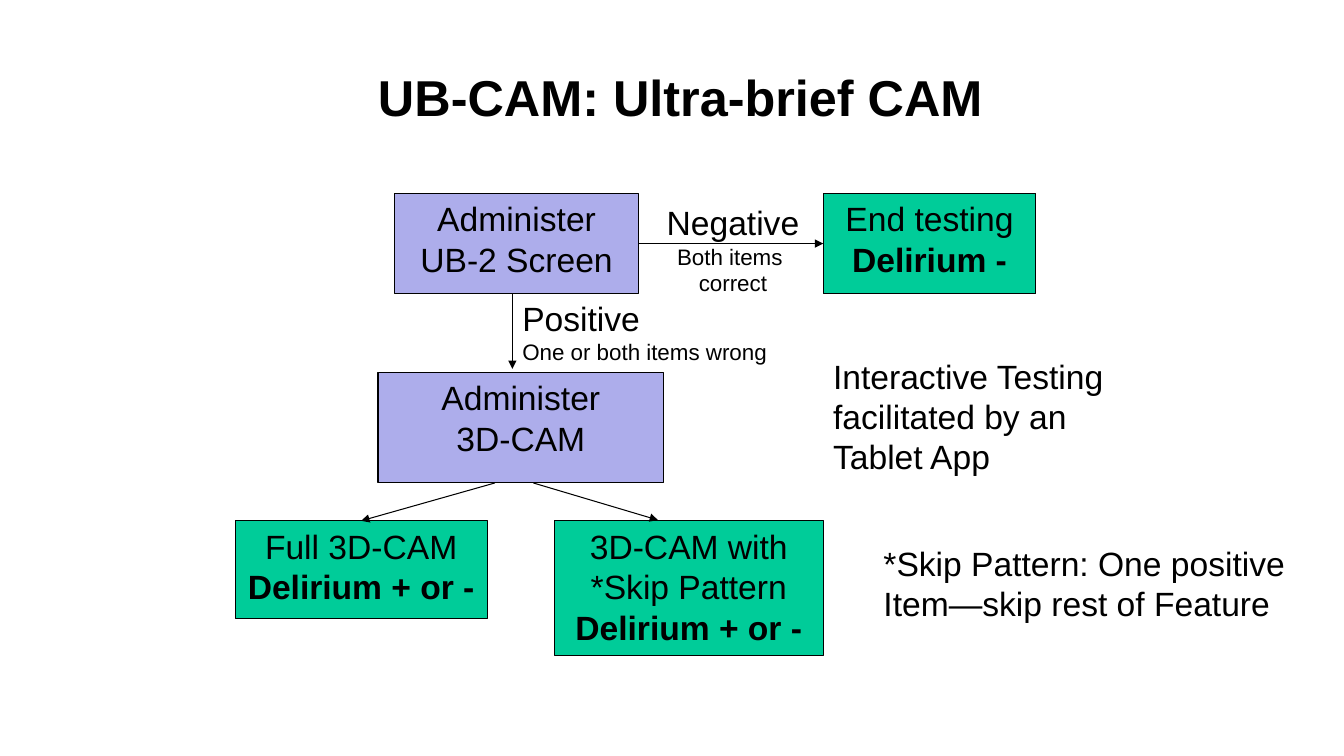
from dataclasses import dataclass

from lxml.etree import SubElement
from pptx import Presentation
from pptx.dml.color import RGBColor
from pptx.enum.shapes import MSO_CONNECTOR, MSO_SHAPE
from pptx.enum.text import MSO_ANCHOR, PP_ALIGN
from pptx.oxml.ns import qn
from pptx.util import Pt


@dataclass(frozen=True)
class Theme:
    """Colours, font and sizes of the flowchart."""
    font: str = "Arial"
    ink: RGBColor = RGBColor(0x00, 0x00, 0x00)
    step: RGBColor = RGBColor(0xAD, 0xAD, 0xEB)
    outcome: RGBColor = RGBColor(0x00, 0xCC, 0x99)
    title_size: int = 36
    body_size: int = 24
    note_size: int = 16
    line_width: float = 0.75


class FlowchartSlide:
    """Draws flowchart elements on one slide in one theme."""

    def __init__(self, slide, theme):
        """Keep the slide and the theme."""
        self.slide = slide
        self.theme = theme

    def fill_text(self, shape, lines, align):
        """Put (text, size, bold) lines into a shape."""
        frame = shape.text_frame
        for index, (text, size, bold) in enumerate(lines):
            paragraph = frame.paragraphs[0] if index == 0 else frame.add_paragraph()
            paragraph.text = text
            paragraph.alignment = align
            paragraph.font.name = self.theme.font
            paragraph.font.size = Pt(size)
            paragraph.font.bold = bold
            paragraph.font.color.rgb = self.theme.ink

    def title(self, bounds, text):
        """Add the centred slide title."""
        shape = self.slide.shapes.add_textbox(*map(Pt, bounds))
        shape.text_frame.word_wrap = True
        shape.text_frame.vertical_anchor = MSO_ANCHOR.MIDDLE
        self.fill_text(shape, [(text, self.theme.title_size, True)], PP_ALIGN.CENTER)

    def box(self, bounds, fill, text, result=None):
        """Add a filled box with plain text and an optional bold result."""
        shape = self.slide.shapes.add_shape(MSO_SHAPE.RECTANGLE, *map(Pt, bounds))
        shape.shadow.inherit = False
        shape.fill.solid()
        shape.fill.fore_color.rgb = fill
        shape.line.color.rgb = self.theme.ink
        shape.line.width = Pt(self.theme.line_width)
        shape.text_frame.word_wrap = True
        shape.text_frame.vertical_anchor = MSO_ANCHOR.TOP
        lines = [(line, self.theme.body_size, False) for line in text.split("\n")]
        if result:
            lines.append((result, self.theme.body_size, True))
        self.fill_text(shape, lines, PP_ALIGN.CENTER)
        return shape

    def label(self, bounds, text, notes=(), align=PP_ALIGN.LEFT):
        """Add unboxed text with optional smaller notes below."""
        shape = self.slide.shapes.add_textbox(*map(Pt, bounds))
        shape.text_frame.word_wrap = False
        lines = [(line, self.theme.body_size, False) for line in text.split("\n")]
        lines += [(note, self.theme.note_size, False) for note in notes]
        self.fill_text(shape, lines, align)

    def arrow(self, start, end, source=None, target=None):
        """Add an arrow, joined to (shape, side) pairs where given."""
        connector = self.slide.shapes.add_connector(
            MSO_CONNECTOR.STRAIGHT, *map(Pt, (*start, *end)))
        if source:
            connector.begin_connect(*source)
        if target:
            connector.end_connect(*target)
        connector.line.color.rgb = self.theme.ink
        connector.line.width = Pt(self.theme.line_width)
        SubElement(connector.get_or_add_ln(), qn("a:tailEnd"), type="triangle")
        SubElement(connector.element.spPr, qn("a:effectLst"))


def main():
    """Build and save the UB-CAM slide."""
    presentation = Presentation()
    presentation.slide_width = Pt(960)
    presentation.slide_height = Pt(540)
    theme = Theme()
    chart = FlowchartSlide(
        presentation.slides.add_slide(presentation.slide_layouts[6]), theme)

    chart.title((180, 24, 612, 90), "UB-CAM: Ultra-brief CAM")

    screen = chart.box((282, 138, 174, 72), theme.step, "Administer UB-2 Screen")
    end_testing = chart.box((588, 138, 152, 72), theme.outcome,
                            "End testing", "Delirium -")
    chart.box((270, 266, 204, 79), theme.step, "Administer\n3D-CAM")
    full_cam = chart.box((168, 372, 180, 70), theme.outcome,
                         "Full 3D-CAM", "Delirium + or -")
    chart.box((396, 372, 192, 96), theme.outcome,
              "3D-CAM with *Skip Pattern", "Delirium + or -")

    chart.arrow((456, 174), (588, 174), (screen, 3), (end_testing, 1))
    chart.arrow((366, 210), (366, 263.5))
    chart.arrow((353.5, 345), (258, 372), target=(full_cam, 0))
    chart.arrow((381, 345), (470, 371.5))

    chart.label((468.5, 141, 110, 75), "Negative",
                ("Both items ", "correct"), PP_ALIGN.CENTER)
    chart.label((366, 209.5, 191.5, 55.5), "Positive", ("One or both items wrong",))
    chart.label((588, 250.5, 209.5, 94.5),
                "Interactive Testing\nfacilitated by an\nTablet App")
    chart.label((624, 384, 316, 65.5),
                "*Skip Pattern: One positive\nItem—skip rest of Feature")

    presentation.save("out.pptx")


if __name__ == "__main__":
    main()
